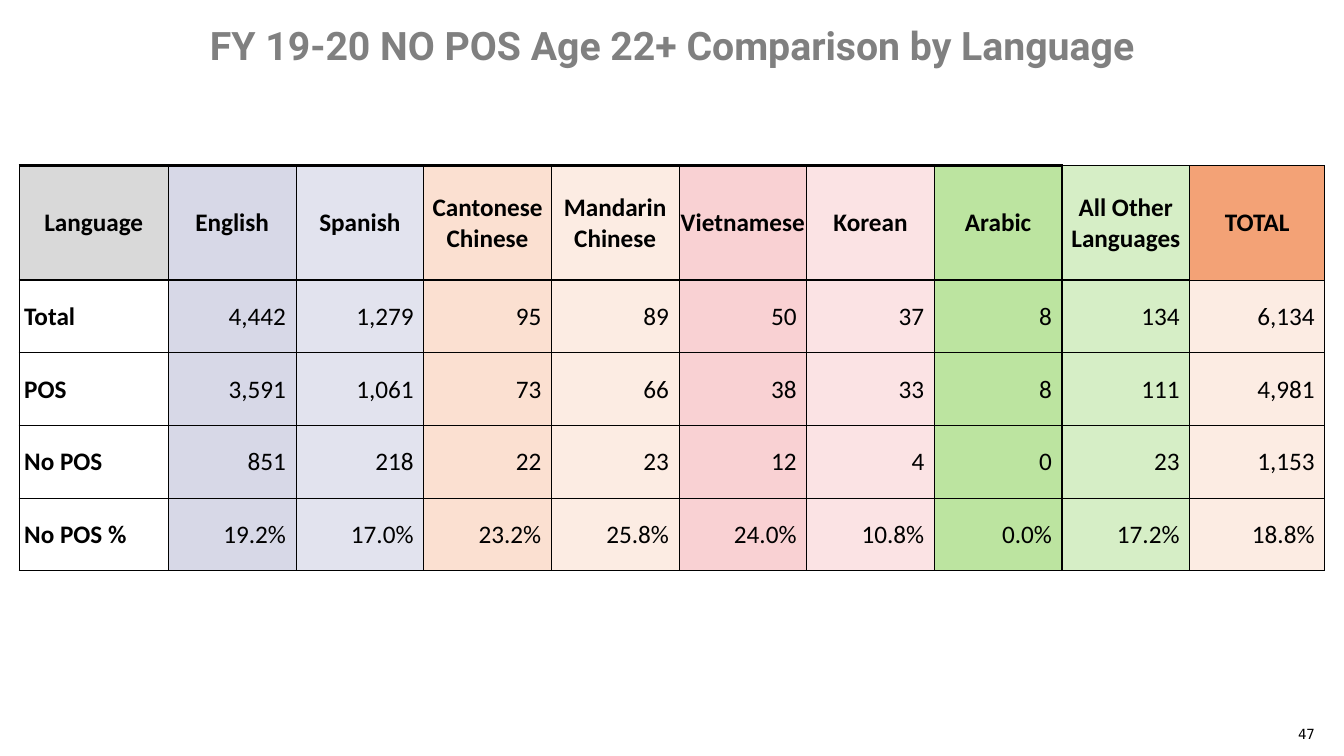
from pptx import Presentation
from pptx.dml.color import RGBColor
from pptx.enum.text import MSO_ANCHOR, PP_ALIGN
from pptx.oxml.ns import qn
from pptx.util import Inches, Pt
from lxml import etree

LEFT, CENTER, RIGHT = PP_ALIGN.LEFT, PP_ALIGN.CENTER, PP_ALIGN.RIGHT
MIDDLE, BOTTOM = MSO_ANCHOR.MIDDLE, MSO_ANCHOR.BOTTOM

BLACK = RGBColor(0x00, 0x00, 0x00)
WHITE = RGBColor(0xFF, 0xFF, 0xFF)
GRAY = RGBColor(0x80, 0x80, 0x80)
SILVER = RGBColor(0xD9, 0xD9, 0xD9)
BLUE = RGBColor(0xD7, 0xD8, 0xE7)
PEACH = RGBColor(0xFB, 0xE0, 0xD1)
PINK = RGBColor(0xF9, 0xD1, 0xD3)
GREEN = RGBColor(0xBC, 0xE4, 0xA0)
ORANGE = RGBColor(0xF3, 0xA2, 0x76)

ROWS = [
    ["Language", "English", "Spanish", "Cantonese\nChinese", "Mandarin\nChinese",
     "Vietnamese", "Korean", "Arabic", "All Other\nLanguages", "TOTAL"],
    ["Total", "4,442", "1,279", "95", "89", "50", "37", "8", "134", "6,134"],
    ["POS", "3,591", "1,061", "73", "66", "38", "33", "8", "111", "4,981"],
    ["No POS", "851", "218", "22", "23", "12", "4", "0", "23", "1,153"],
    ["No POS %", "19.2%", "17.0%", "23.2%", "25.8%", "24.0%", "10.8%", "0.0%",
     "17.2%", "18.8%"],
]
FILLS = [(WHITE, 100), (BLUE, 100), (BLUE, 70), (PEACH, 100), (PEACH, 60),
         (PINK, 100), (PINK, 60), (GREEN, 100), (GREEN, 60), (PEACH, 60)]
HEADS = {0: (SILVER, 100), 9: (ORANGE, 100)}
GROUPS = {0, 3, 7, 8, 9, 10}
THICK = {0: 8, 1: 9}


class Deck:
    """Holds the text style and the current slide."""

    def __init__(self, slide, font, size):
        self.slide, self.font, self.size = slide, font, size

    def style(self, frame, align, bold=False, color=BLACK, font=None, size=None):
        for par in frame.paragraphs:
            par.alignment = align
            par.font.name = font or self.font
            par.font.size = Pt(size or self.size)
            par.font.bold = bold
            par.font.color.rgb = color

    def text(self, words, box, anchor, align, **look):
        frame = self.slide.shapes.add_textbox(*map(Inches, box)).text_frame
        frame.word_wrap = True
        frame.vertical_anchor = anchor
        frame.text = words
        self.style(frame, align, **look)

    def border(self, cell, side, width):
        line = etree.SubElement(cell._tc.get_or_add_tcPr(), qn("a:ln" + side),
                                w=str(Pt(width)))
        fill = etree.SubElement(line, qn("a:solidFill"))
        etree.SubElement(fill, qn("a:srgbClr"), val=str(BLACK))

    def fill(self, cell, color, alpha):
        cell.fill.solid()
        cell.fill.fore_color.rgb = color
        if alpha < 100:
            tint = cell._tc.tcPr.find(qn("a:solidFill"))[0]
            etree.SubElement(tint, qn("a:alpha"), val=str(alpha * 1000))

    def cell(self, cell, words, row, col):
        head, label = row == 0, col == 0
        for side, edge in (("L", col), ("R", col + 1)):
            self.border(cell, side, 1 if edge in GROUPS else 0.5)
        for side, edge in (("T", row), ("B", row + 1)):
            self.border(cell, side, 2 if col < THICK.get(edge, 0) else 0.5)
        self.fill(cell, *(HEADS.get(col, FILLS[col]) if head else FILLS[col]))
        cell.vertical_anchor = MIDDLE
        cell.margin_left = Inches(0.05 if label and not head else 0.01)
        cell.margin_right = Inches(0.01 if label or head else 0.1)
        cell.margin_top, cell.margin_bottom = Inches(0.01), 0
        cell.text = words
        align = CENTER if head else LEFT if label else RIGHT
        self.style(cell.text_frame, align, bold=head or label)

    def table(self, rows, box, widths, heights):
        table = self.slide.shapes.add_table(
            len(rows), len(widths), *map(Inches, box)).table
        for col, width in zip(table.columns, widths):
            col.width = Inches(width)
        for row, height in zip(table.rows, heights):
            row.height = Inches(height)
        for r, row in enumerate(rows):
            for c, words in enumerate(row):
                self.cell(table.cell(r, c), words, r, c)


def main():
    prs = Presentation()
    prs.slide_width, prs.slide_height = Inches(13.33), Inches(7.5)
    deck = Deck(prs.slides.add_slide(prs.slide_layouts[6]), "Calibri", 18)
    deck.text("FY 19-20 NO POS Age 22+ Comparison by Language",
              (0, 0, 13.33, 0.9), MIDDLE, CENTER,
              bold=True, color=GRAY, font="Roboto", size=28)
    deck.text("47", (12.61, 7.01, 0.53, 0.4), BOTTOM, RIGHT,
              font="DejaVu Sans Mono", size=10)
    width, first, last = 12.95, 1.48, 1.34
    inner = (width - first - last) / 8
    deck.table(ROWS, (0.19, 1.64, width, 4.02),
               [first] + [inner] * 8 + [last], [1.14] + [0.72] * 4)
    prs.save("out.pptx")


if __name__ == "__main__":
    main()
